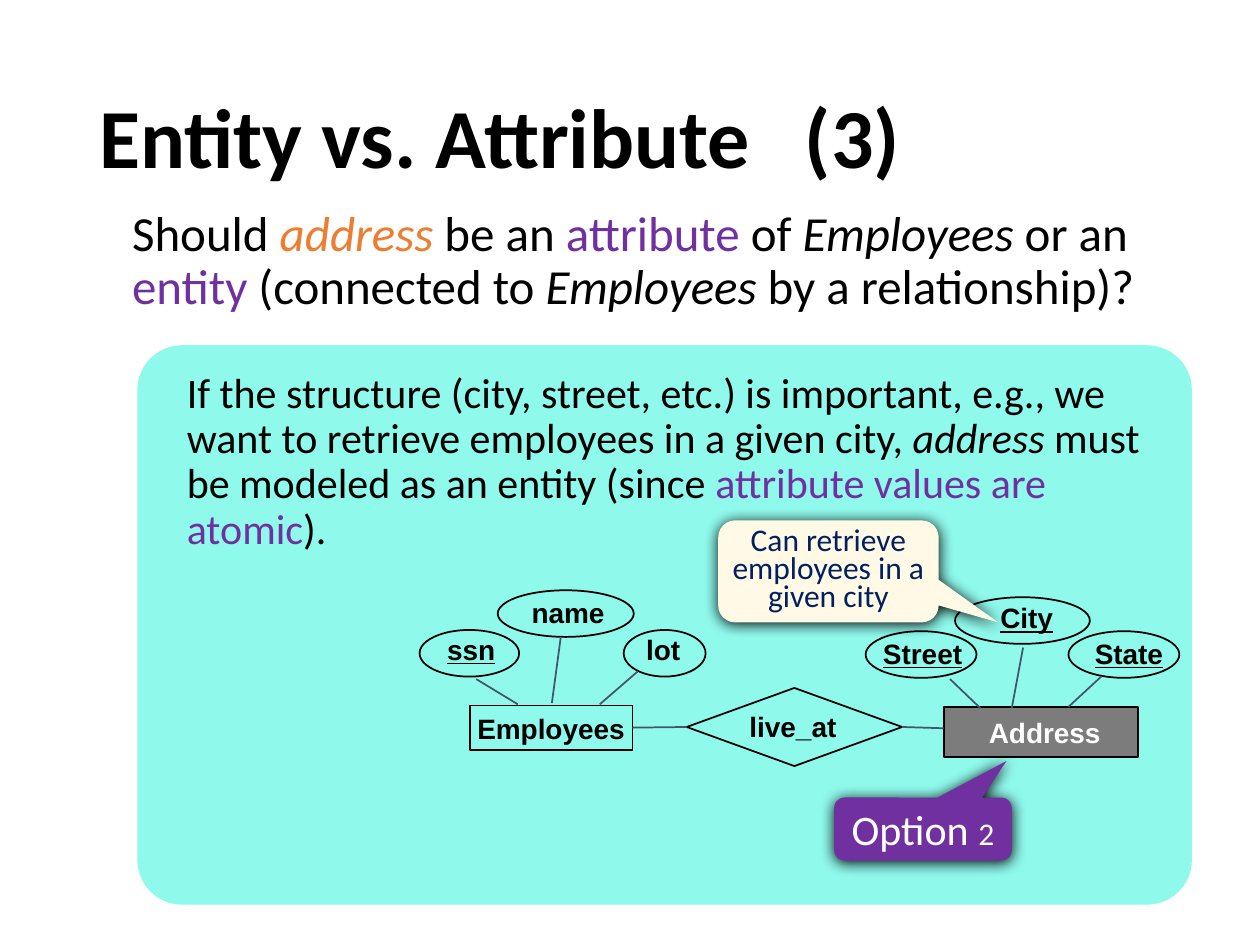
from dataclasses import dataclass
from typing import NamedTuple, Optional

import lxml.etree
import pptx
import pptx.dml.color
import pptx.enum.shapes
import pptx.enum.text
import pptx.oxml.ns
import pptx.util

COLUMNS, ROWS = 100, 75
SLIDE_WIDTH, SLIDE_HEIGHT = pptx.util.Inches(10), pptx.util.Inches(7.5)

BLACK, WHITE, PURPLE, ORANGE = "000000", "FFFFFF", "7030A0", "ED7D31"
NAVY, SLATE, GRAY, AQUA, CREAM = "002060", "44546A", "7C7C7C", "8FF9EC", "FFF9E6"

SHAPE = pptx.enum.shapes.MSO_SHAPE
ANCHOR = pptx.enum.text.MSO_ANCHOR
ALIGN = pptx.enum.text.PP_ALIGN
qn = pptx.oxml.ns.qn


class Box(NamedTuple):
    """A place on the grid, in columns and rows."""
    left: float
    top: float
    width: float
    height: float


class Run(NamedTuple):
    text: str
    size: float
    color: str = BLACK
    italic: bool = False
    bold: bool = False
    underline: bool = False
    font: str = "Calibri"


@dataclass
class Node:
    """An outlined figure of the diagram and its label."""
    label: str
    kind: int
    box: Box
    label_box: Box
    key: bool = False
    fill: Optional[str] = None
    color: str = BLACK


class Spoke(NamedTuple):
    x1: float
    y1: float
    x2: float
    y2: float


@dataclass
class Callout:
    box: Box
    tip: tuple
    fill: str
    runs: list
    side_inset: float = 0
    edge_inset: float = 0
    spacing: Optional[float] = None


NODES = [
    Node("name", SHAPE.OVAL, Box(39.5, 46.85, 10.8, 3.7), Box(41.2, 46.8, 7.8, 3.6)),
    Node("ssn", SHAPE.OVAL, Box(33.3, 50, 7.9, 3.7), Box(34.5, 49.7, 5.8, 3.6), key=True),
    Node("lot", SHAPE.OVAL, Box(49.5, 50, 6.5, 3.7), Box(50.3, 49.7, 4.7, 3.6)),
    Node("Employees", SHAPE.RECTANGLE, Box(37.3, 56, 12.9, 3.5), Box(36.9, 56, 13.7, 3.6)),
    Node("live_at", SHAPE.DIAMOND, Box(54.5, 54.6, 17.1, 6.2), Box(58.5, 55.8, 9, 3.7)),
    Node("State", SHAPE.OVAL, Box(84.8, 50.1, 8.8, 3.7), Box(85.9, 50, 7.5, 3.7), key=True),
    Node("City", SHAPE.OVAL, Box(75.8, 47.4, 10.7, 3.7), Box(78.4, 47.2, 6.2, 3.7), key=True),
    Node("Street", SHAPE.OVAL, Box(68.7, 50.1, 8.8, 3.7), Box(69.1, 50, 8.4, 3.7), key=True),
    Node("Address", SHAPE.RECTANGLE, Box(74.9, 56.1, 15.4, 4), Box(77.5, 56.3, 11, 3.7),
         fill=GRAY, color=WHITE),
]

SPOKES = [
    Spoke(37.8, 53.9, 41.1, 55.9),
    Spoke(44.5, 50.6, 43.8, 55.8),
    Spoke(50.6, 53.3, 47.6, 55.9),
    Spoke(81.2, 51.4, 80.3, 56.2),
    Spoke(87.4, 53.7, 84.8, 56.1),
    Spoke(75.4, 53.9, 77.8, 56.2),
]

CALLOUTS = [
    Callout(Box(66.2, 63.3, 14.1, 5), (0.47, -1.08), PURPLE,
            [Run("Option ", 24, WHITE), Run("2", 18, WHITE)], edge_inset=0.5),
    Callout(Box(57, 41.3, 17.5, 8.1), (0.77, 0.5), CREAM,
            [Run("Can retrieve employees in a given city", 18, NAVY)], spacing=16),
]

QUESTION = [
    Run("Should ", 28), Run("address ", 28, ORANGE, True), Run("be an ", 28),
    Run("attribute", 28, PURPLE), Run(" of ", 28), Run("Employees", 28, italic=True),
    Run(" or an ", 28), Run("entity", 28, PURPLE), Run(" (connected to ", 28),
    Run("Employees", 28, italic=True), Run(" by a relationship)?", 28),
]

ANSWER = [
    Run("If the structure (city, street, etc.) is important, e.g., we want to retrieve "
        "employees in a given city, ", 24),
    Run("address", 24, italic=True), Run(" must be modeled as an entity (since ", 24),
    Run("attribute values are atomic", 24, PURPLE), Run(").", 24),
]


def col(n: float) -> int:
    return round(SLIDE_WIDTH * n / COLUMNS)


def row(n: float) -> int:
    return round(SLIDE_HEIGHT * n / ROWS)


def place(box: Box) -> tuple:
    return col(box.left), row(box.top), col(box.width), row(box.height)


def rgb(color: str):
    return pptx.dml.color.RGBColor.from_string(color)


def write(tf, runs: list):
    p = tf.paragraphs[0]
    for run in runs:
        r = p.add_run()
        r.text = run.text
        f = r.font
        f.name, f.size, f.color.rgb = run.font, pptx.util.Pt(run.size), rgb(run.color)
        f.italic, f.bold, f.underline = run.italic, run.bold, run.underline
    return p


def add_shape(slide, kind: int, box: Box, fill: Optional[str], line: Optional[str] = None):
    sp = slide.shapes.add_shape(kind, *place(box))
    sp.shadow.inherit = False
    if fill:
        sp.fill.solid()
        sp.fill.fore_color.rgb = rgb(fill)
    else:
        sp.fill.background()
    if line:
        sp.line.color.rgb = rgb(line)
        sp.line.width = pptx.util.Pt(1)
    else:
        sp.line.fill.background()
    return sp


def add_text(slide, box: Box, runs: list, wrap: bool = True):
    sp = slide.shapes.add_textbox(*place(box))
    sp.text_frame.word_wrap = wrap
    return sp, write(sp.text_frame, runs)


def add_node(slide, node: Node):
    sp = add_shape(slide, node.kind, node.box, node.fill, BLACK)
    run = Run(node.label, 16, node.color, bold=True, underline=node.key, font="Arial")
    label, _ = add_text(slide, node.label_box, [run], wrap=False)
    label.text_frame.auto_size = pptx.enum.text.MSO_AUTO_SIZE.SHAPE_TO_FIT_TEXT
    return sp


def add_line(slide, spoke: Spoke):
    line = slide.shapes.add_connector(
        pptx.enum.shapes.MSO_CONNECTOR.STRAIGHT,
        col(spoke.x1), row(spoke.y1), col(spoke.x2), row(spoke.y2))
    line.line.color.rgb = rgb(SLATE)
    line.line.width = pptx.util.Pt(1)
    lxml.etree.SubElement(line._element.spPr, qn("a:effectLst"))
    return line


def add_callout(slide, callout: Callout):
    sp = add_shape(slide, SHAPE.ROUNDED_RECTANGULAR_CALLOUT, callout.box, callout.fill)
    sp.adjustments[0], sp.adjustments[1] = callout.tip
    effects = sp._element.spPr.find(qn("a:effectLst"))
    shadow = lxml.etree.SubElement(
        effects, qn("a:outerShdw"), blurRad=str(pptx.util.Pt(8.5)),
        dist=str(pptx.util.Pt(1)), dir="5400000", rotWithShape="0")
    lxml.etree.SubElement(shadow, qn("a:srgbClr"), val=BLACK)
    tf = sp.text_frame
    tf.word_wrap, tf.vertical_anchor = True, ANCHOR.MIDDLE
    tf.margin_left = tf.margin_right = col(callout.side_inset)
    tf.margin_top = tf.margin_bottom = row(callout.edge_inset)
    p = write(tf, callout.runs)
    p.alignment = ALIGN.CENTER
    if callout.spacing:
        p.line_spacing = pptx.util.Pt(callout.spacing)


def add_answer(slide):
    sp = add_shape(slide, SHAPE.ROUNDED_RECTANGLE, Box(10.9, 27.4, 83.7, 44.4), AQUA)
    sp.adjustments[0] = 0.08
    tf = sp.text_frame
    tf.word_wrap, tf.vertical_anchor, tf.margin_top = True, ANCHOR.TOP, row(1)
    p = write(tf, ANSWER)
    p.alignment, p.line_spacing = ALIGN.LEFT, pptx.util.Pt(26)
    p._p.get_or_add_pPr().set("marL", str(col(1.9)))


def add_heading(slide):
    title, p = add_text(slide, Box(6.9, 4, 86.2, 14.5),
                        [Run("Entity vs. Attribute\t(3)", 48, bold=True)])
    title.text_frame.vertical_anchor = ANCHOR.MIDDLE
    p.line_spacing = 0.9
    tabs = lxml.etree.SubElement(p._p.get_or_add_pPr(), qn("a:tabLst"))
    lxml.etree.SubElement(tabs, qn("a:tab"), pos=str(col(56)), algn="l")
    _, p = add_text(slide, Box(9.5, 16.1, 83.4, 11.7), QUESTION)
    p.line_spacing = pptx.util.Pt(30)
    p.space_before, p.space_after = pptx.util.Pt(10), pptx.util.Pt(12)


def main():
    prs = pptx.Presentation()
    prs.slide_width, prs.slide_height = SLIDE_WIDTH, SLIDE_HEIGHT
    slide = prs.slides.add_slide(prs.slide_layouts[6])
    add_answer(slide)
    add_heading(slide)
    figures = {node.label: add_node(slide, node) for node in NODES}
    for spoke in SPOKES:
        add_line(slide, spoke)
    left_link = add_line(slide, Spoke(50.2, 57.8, 54.5, 57.8))
    left_link.begin_connect(figures["Employees"], 3)
    left_link.end_connect(figures["live_at"], 1)
    right_link = add_line(slide, Spoke(71.6, 57.7, 74.9, 57.8))
    right_link.begin_connect(figures["live_at"], 3)
    for callout in CALLOUTS:
        add_callout(slide, callout)
    prs.save("out.pptx")


if __name__ == "__main__":
    main()
